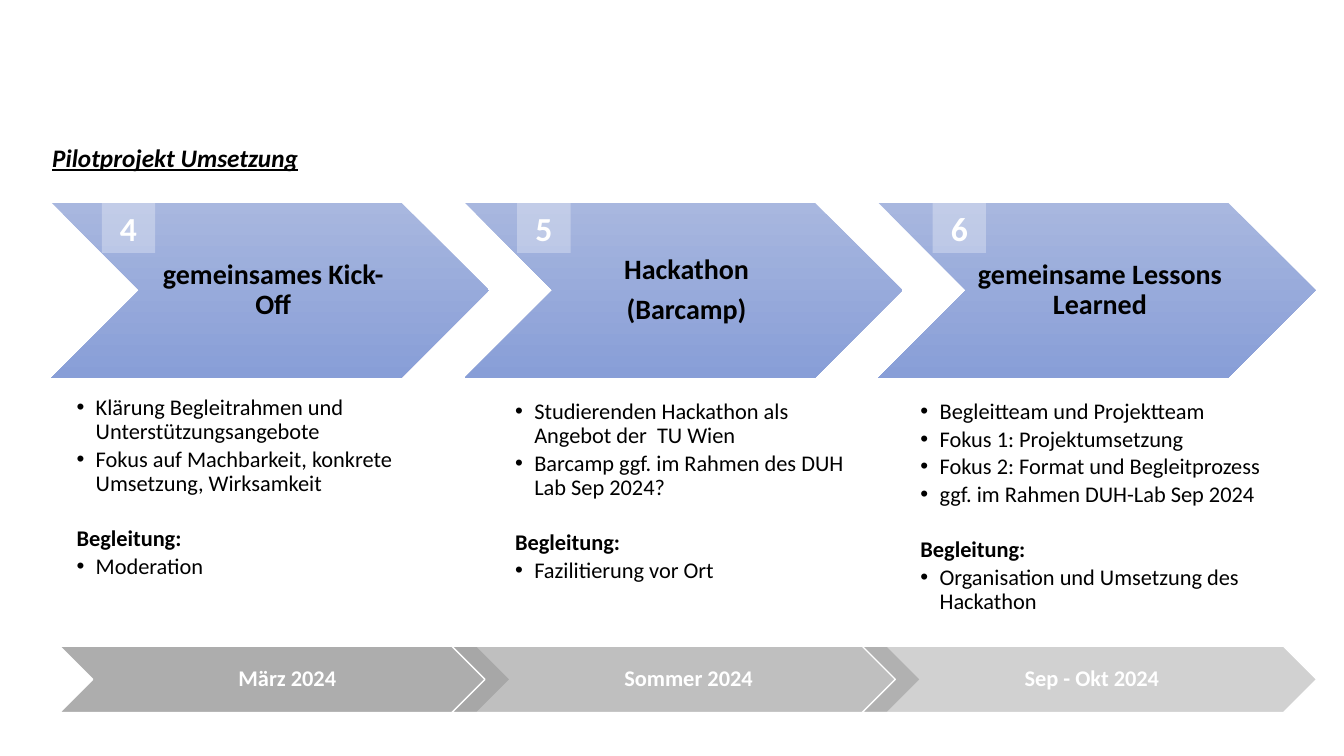
import pptx
import pptx.util
import pptx.dml.color
import pptx.enum.shapes
import pptx.enum.text
import pptx.oxml.ns
from lxml import etree

Inches = pptx.util.Inches
Pt = pptx.util.Pt
SHAPES = pptx.enum.shapes.MSO_SHAPE
ANCHOR = pptx.enum.text.MSO_ANCHOR
ALIGN = pptx.enum.text.PP_ALIGN
qn = pptx.oxml.ns.qn

FONT = "Calibri"
BLACK, WHITE, GREY = "000000", "FFFFFF", "A5A5A5"
GRADIENT = ("A8B7DF", "889ED7")
SUPPORT = "Begleitung:"

STEP_LEFT, STEP_TOP, STEP_WIDTH, STEP_HEIGHT = 0.51, 2.01, 4.34, 1.74
STEP_PITCH = 4.1
BADGE_LEFT, BADGE_PITCH = 1.01, 4.12

# Heading lines, details position, details, support
STEPS = [
    (["gemeinsames Kick-Off"], (0.76, 3.93),
     ["Klärung Begleitrahmen und Unterstützungsangebote",
      "Fokus auf Machbarkeit, konkrete Umsetzung, Wirksamkeit"],
     "Moderation"),
    (["Hackathon", "(Barcamp)"], (5.11, 3.97),
     ["Studierenden Hackathon als Angebot der  TU Wien",
      "Barcamp ggf. im Rahmen des DUH Lab Sep 2024?"],
     "Fazilitierung vor Ort"),
    (["gemeinsame Lessons Learned"], (9.13, 3.97),
     ["Begleitteam und Projektteam",
      "Fokus 1: Projektumsetzung",
      "Fokus 2: Format und Begleitprozess",
      "ggf. im Rahmen DUH-Lab Sep 2024"],
     "Organisation und Umsetzung des Hackathon"),
]

# Label, left, width, opacity in percent
PERIODS = [
    ("März 2024", 0.59, 4.47, 90),
    ("Sommer 2024", 4.48, 4.65, 70),
    ("Sep - Okt 2024", 8.55, 4.51, 50),
]


def color(value):
    return pptx.dml.color.RGBColor.from_string(value)


def set_solid_fill(shape, value, opacity):
    shape.fill.solid()
    shape.fill.fore_color.rgb = color(value)
    srgb = shape.fill._xPr.find(".//" + qn("a:srgbClr"))
    etree.SubElement(srgb, qn("a:alpha")).set("val", str(opacity * 1000))


def set_frame(shape, insets=(0.1, 0.05, 0.1, 0.05), anchor=ANCHOR.TOP, wrap=True):
    frame = shape.text_frame
    frame.word_wrap = wrap
    frame.vertical_anchor = anchor
    frame.margin_left, frame.margin_top, frame.margin_right, frame.margin_bottom = map(Inches, insets)
    return frame


def add_text(frame, text, size=16, value=BLACK, bold=False, italic=False, underline=False,
             align=ALIGN.LEFT, spacing=1.0, before=0, after=0, bullet=False):
    first = frame.paragraphs[0]
    paragraph = frame.add_paragraph() if first.runs else first
    paragraph.alignment = align
    paragraph.line_spacing = spacing
    paragraph.space_before = Pt(before)
    paragraph.space_after = Pt(after)
    if bullet:
        properties = paragraph._p.get_or_add_pPr()
        properties.set("marL", str(Inches(0.19)))
        properties.set("indent", str(-Inches(0.19)))
        etree.SubElement(properties, qn("a:buFont")).set("typeface", "Arial")
        etree.SubElement(properties, qn("a:buChar")).set("char", "•")
    run = paragraph.add_run()
    run.text = text
    font = run.font
    font.name, font.size = FONT, Pt(size)
    font.bold, font.italic, font.underline = bold, italic, underline
    font.color.rgb = color(value)


def add_box(slide, kind, left, top, width, height):
    shape = slide.shapes.add_shape(kind, Inches(left), Inches(top), Inches(width), Inches(height))
    shape.shadow.inherit = False
    shape.line.fill.background()
    return shape


def add_title(slide, left, top, width, height):
    box = slide.shapes.add_textbox(Inches(left), Inches(top), Inches(width), Inches(height))
    add_text(set_frame(box, wrap=False), "Pilotprojekt Umsetzung", size=18,
             bold=True, italic=True, underline=True)


def add_step(slide, left, top, width, height, heading):
    arrow = add_box(slide, SHAPES.CHEVRON, left, top, width, height)
    arrow.fill.gradient()
    arrow.fill.gradient_angle = 270
    for stop, value, position in zip(arrow.fill.gradient_stops, GRADIENT, (0, 1)):
        stop.color.rgb = color(value)
        stop.position = position
    frame = set_frame(arrow, (0.09, 0.03, 0.03, 0.03), ANCHOR.MIDDLE)
    for line in heading:
        add_text(frame, line, size=20, bold=True, align=ALIGN.CENTER, spacing=0.9, after=7)


def add_details(slide, left, top, width, height, details, support):
    box = slide.shapes.add_textbox(Inches(left), Inches(top), Inches(width), Inches(height))
    frame = set_frame(box, (0, 0, 0, 0))
    layout = {"spacing": 0.9, "after": 2.4}
    for detail in details:
        add_text(frame, detail, bullet=True, **layout)
    add_text(frame, SUPPORT, bold=True, before=20, **layout)
    add_text(frame, support, bullet=True, **layout)


def add_period(slide, left, top, width, height, label, opacity):
    arrow = add_box(slide, SHAPES.CHEVRON, left, top, width, height)
    set_solid_fill(arrow, GREY, opacity)
    arrow.line.color.rgb = color(WHITE)
    arrow.line.width = Pt(1)
    frame = set_frame(arrow, (0.07, 0.02, 0.02, 0.02), ANCHOR.MIDDLE)
    add_text(frame, label, value=WHITE, bold=True, align=ALIGN.CENTER, spacing=0.9, after=5.6)


def add_badge(slide, left, top, width, height, number):
    badge = add_box(slide, SHAPES.RECTANGLE, left, top, width, height)
    set_solid_fill(badge, WHITE, 30)
    add_text(set_frame(badge, anchor=ANCHOR.MIDDLE), str(number), size=24,
             value=WHITE, bold=True, align=ALIGN.CENTER)


def main():
    presentation = pptx.Presentation()
    presentation.slide_width = Inches(13.33)
    presentation.slide_height = Inches(7.5)
    slide = presentation.slides.add_slide(presentation.slide_layouts[6])

    # Steps with their details
    for index, (heading, (left, top), details, support) in enumerate(STEPS):
        add_step(slide, STEP_LEFT + index * STEP_PITCH, STEP_TOP, STEP_WIDTH, STEP_HEIGHT, heading)
        add_details(slide, left, top, 3.47, 2.44, details, support)

    add_title(slide, 0.42, 1.36, 2.67, 0.4)

    # Timeline
    for label, left, width, opacity in PERIODS:
        add_period(slide, left, 6.41, width, 0.66, label, opacity)

    # Step numbers
    for index in range(len(STEPS)):
        add_badge(slide, BADGE_LEFT + index * BADGE_PITCH, STEP_TOP, 0.53, 0.5, index + 4)

    presentation.save("out.pptx")


if __name__ == "__main__":
    main()
